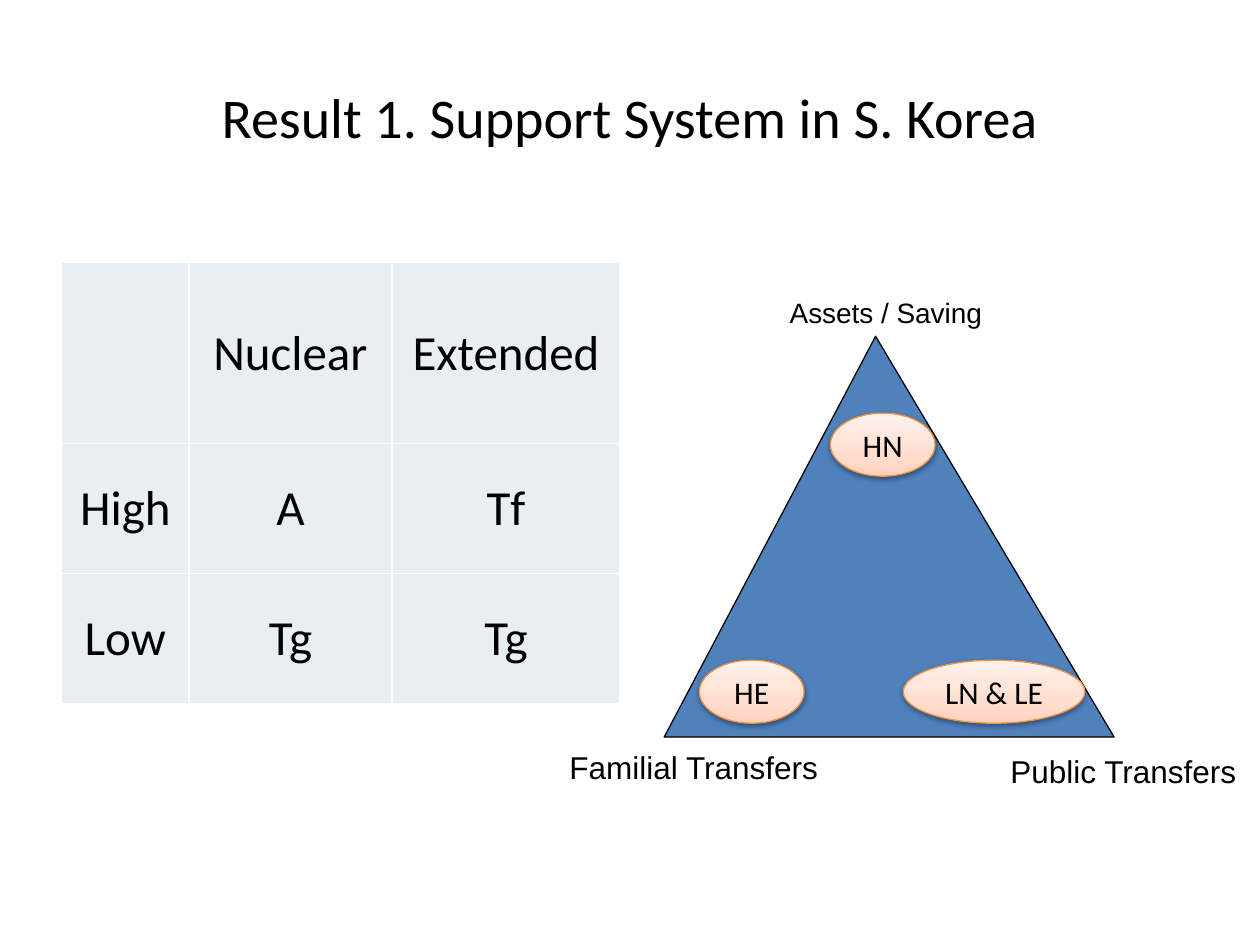
"""Build a slide on the support system in South Korea: a table and a triangle of sources."""
from copy import deepcopy

from lxml import etree
from pptx import Presentation
from pptx.dml.color import RGBColor
from pptx.enum.shapes import MSO_SHAPE
from pptx.enum.text import MSO_ANCHOR, PP_ALIGN
from pptx.oxml import parse_xml
from pptx.oxml.ns import nsdecls, qn
from pptx.util import Cm, Pt

TRIANGLE, OVAL = MSO_SHAPE.ISOSCELES_TRIANGLE, MSO_SHAPE.OVAL
LEFT, CENTER, MIDDLE = PP_ALIGN.LEFT, PP_ALIGN.CENTER, MSO_ANCHOR.MIDDLE


def color(value):
    return RGBColor.from_string(value)


def write(frame, text, size, font="Calibri", align=CENTER):
    para = frame.paragraphs[0]
    para.text = text
    para.alignment = align
    para.font.name = font
    para.font.size = Pt(size)
    para.font.color.rgb = color("000000")


deck = Presentation()
deck.slide_width, deck.slide_height = Cm(25.4), Cm(19.05)
slide = deck.slides.add_slide(deck.slide_layouts[6])
shapes = slide.shapes

title = shapes.add_textbox(Cm(1.27), Cm(0.76), Cm(22.86), Cm(3.18)).text_frame
title.word_wrap = True
title.vertical_anchor = MIDDLE
write(title, "Result 1. Support System in S. Korea", 32)

rows = [["", "Nuclear", "Extended"], ["High", "A", "Tf"], ["Low", "Tg", "Tg"]]
widths, heights = [2.57, 4.09, 4.6], [3.66, 2.62, 2.62]
table = shapes.add_table(3, 3, Cm(1.24), Cm(5.28), Cm(sum(widths)), Cm(sum(heights))).table
for column, width in zip(table.columns, widths):
    column.width = Cm(width)
for row, height, texts in zip(table.rows, heights, rows):
    row.height = Cm(height)
    for cell, text in zip(row.cells, texts):
        cell.margin_left = cell.margin_right = cell.margin_top = Cm(0.03)
        cell.margin_bottom = 0
        cell.vertical_anchor = MIDDLE
        for side in ("lnL", "lnR", "lnT", "lnB"):
            cell._tc.get_or_add_tcPr().append(parse_xml(
                f'<a:{side} {nsdecls("a")} w="12700"><a:solidFill>'
                f'<a:srgbClr val="FFFFFF"/></a:solidFill></a:{side}>'))
        cell.fill.solid()
        cell.fill.fore_color.rgb = color("E9EDF4")
        write(cell.text_frame, text, 28)

triangle = shapes.add_shape(TRIANGLE, Cm(13.39), Cm(6.78), Cm(9.07), Cm(8.08))
triangle.adjustments[0] = 0.47
triangle.shadow.inherit = False
triangle.fill.solid()
triangle.fill.fore_color.rgb = color("4F81BD")
triangle.line.color.rgb = color("000000")
triangle.line.width = Pt(0.75)

corners = [
    ("Assets / Saving", 15.67, 5.84, 6.4, 0.94, 16),
    ("Public Transfers", 20.12, 15.04, 12.7, 1.02, 18),
    ("Familial Transfers", 11.23, 14.96, 12.7, 1.02, 18),
]
for text, left, top, width, height, size in corners:
    label = shapes.add_textbox(Cm(left), Cm(top), Cm(width), Cm(height)).text_frame
    label.word_wrap = True
    write(label, text, size, "Arial", LEFT)

groups = [("HN", 16.74, 8.33, 2.11), ("HE", 14.1, 13.31, 2.11), ("LN & LE", 18.21, 13.31, 3.66)]
gradient = [(0, "FFD2BD"), (0.35, "FFDED0"), (1, "FFF2ED")]
for text, left, top, width in groups:
    oval = shapes.add_shape(OVAL, Cm(left), Cm(top), Cm(width), Cm(1.27))
    oval.fill.gradient()
    oval.fill.gradient_angle = 90
    stop_list = oval._element.spPr.find(qn("a:gradFill")).find(qn("a:gsLst"))
    stop_list.append(deepcopy(stop_list[0]))
    for stop, (position, value) in zip(oval.fill.gradient_stops, gradient):
        stop.position = position
        stop.color.rgb = color(value)
    oval.line.color.rgb = color("F69240")
    oval.line.width = Pt(0.75)
    oval.shadow.inherit = False
    shadow = etree.SubElement(
        oval._element.spPr.find(qn("a:effectLst")), qn("a:outerShdw"),
        blurRad=str(Pt(3.1)), dist=str(Pt(1.6)), dir="5400000", rotWithShape="0")
    shade = etree.SubElement(shadow, qn("a:srgbClr"), val="000000")
    etree.SubElement(shade, qn("a:alpha"), val="38000")
    oval.text_frame.word_wrap = False
    oval.text_frame.vertical_anchor = MIDDLE
    write(oval.text_frame, text, 18)

deck.save("out.pptx")
